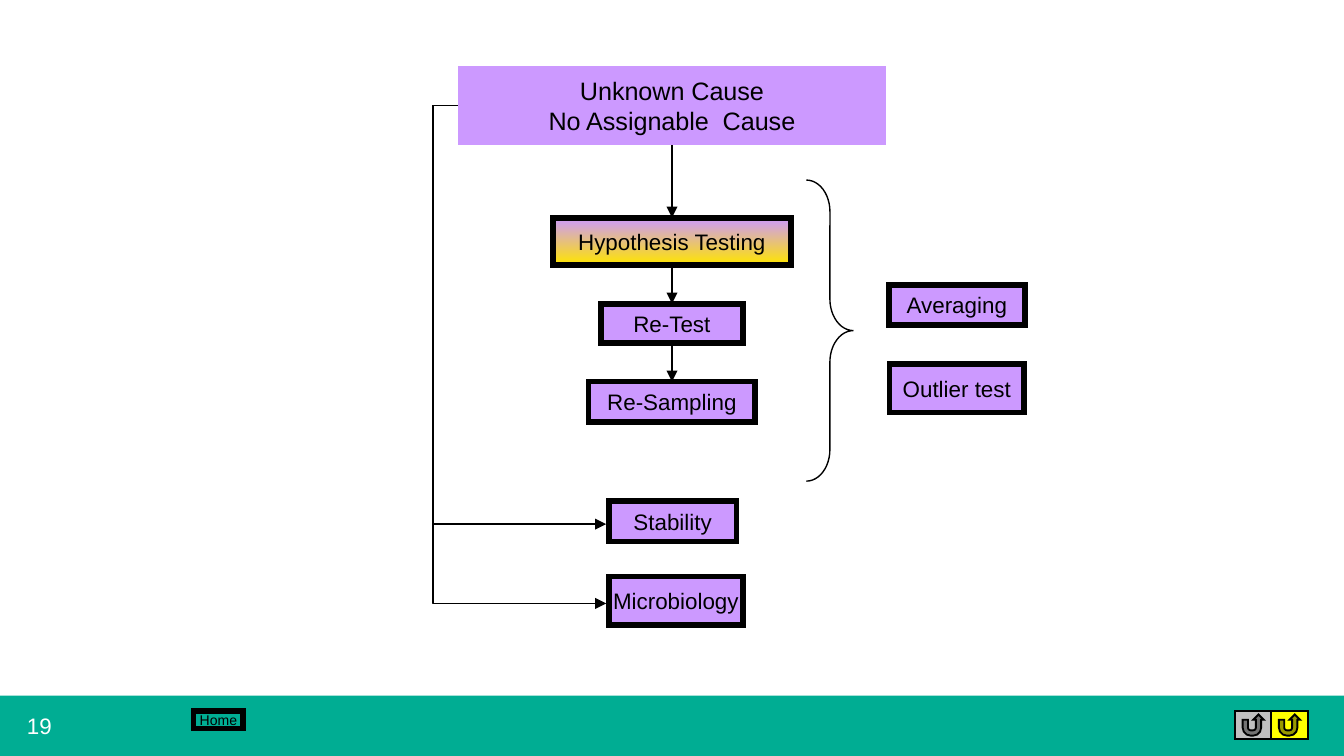
from dataclasses import dataclass
from lxml import etree
from pptx import Presentation
from pptx.dml.color import RGBColor
from pptx.enum.shapes import MSO_CONNECTOR, MSO_SHAPE
from pptx.enum.text import MSO_ANCHOR, PP_ALIGN
from pptx.oxml.ns import qn
from pptx.util import Inches, Pt

PROCESS = MSO_SHAPE.FLOWCHART_PROCESS
RECTANGLE = MSO_SHAPE.RECTANGLE
BRACE = MSO_SHAPE.RIGHT_BRACE
RETURN_BUTTON = MSO_SHAPE.ACTION_BUTTON_RETURN
STRAIGHT, ELBOW = MSO_CONNECTOR.STRAIGHT, MSO_CONNECTOR.ELBOW
LEFT, CENTER = PP_ALIGN.LEFT, PP_ALIGN.CENTER
MIDDLE = MSO_ANCHOR.MIDDLE
TOP_SIDE, BOTTOM_SIDE = 0, 2


@dataclass(frozen=True)
class Theme:
    font: str = "Arial"
    ink: str = "000000"
    paper: str = "FFFFFF"
    band: str = "00AD93"
    box: str = "CC99FF"
    glow: str = "FFE500"
    heading: float = 13.5
    body: float = 12
    small: float = 7.5
    thick: float = 3
    thin: float = 0.75


THEME = Theme()
WIDTH = 10
HEIGHT = WIDTH * 9 / 16
BAND_TOP = HEIGHT * 0.92
BAND_HEIGHT = HEIGHT - BAND_TOP
AXIS = WIDTH / 2
SIDE_AXIS = 7.12
TRUNK, BRANCH_LEFT = 3.22, 4.53

CAUSE = ("Unknown Cause\nNo Assignable  Cause", 0.49, 3.19, 0.59)
STEPS = [
    ("Hypothesis Testing", 1.62, 1.77, 0.35),
    ("Re-Test", 2.26, 1.06, 0.29),
    ("Re-Sampling", 2.84, 1.24, 0.3),
]
EVALUATIONS = [
    ("Averaging", 2.12, 1.01, 0.3),
    ("Outlier test", 2.71, 1, 0.36),
]
BRANCHES = [
    ("Stability", 3.73, 0.95, 0.3),
    ("Microbiology", 4.29, 1, 0.36),
]
BUTTON_FILLS = ["C0C0C0", "FFFF00"]
BUTTON_LEFT, BUTTON_WIDTH, BUTTON_HEIGHT = 9.19, 0.27, 0.21


def add_box(page, kind, left, top, width, height, fill=None, fade=None, line=None, weight=THEME.thick):
    box = page.shapes.add_shape(kind, *map(Inches, (left, top, width, height)))
    box.shadow.inherit = False
    if fade:
        box.fill.gradient()
        box.fill.gradient_angle = 270
        for stop, color in zip(box.fill.gradient_stops, (fill, fade)):
            stop.color.rgb = RGBColor.from_string(color)
    elif fill:
        box.fill.solid()
        box.fill.fore_color.rgb = RGBColor.from_string(fill)
    else:
        box.fill.background()
    if line:
        box.line.color.rgb = RGBColor.from_string(line)
        box.line.width = Pt(weight)
        etree.SubElement(box.element.spPr.find(qn("a:ln")), qn("a:miter"), lim="800000")
    else:
        box.line.fill.background()
    return box


def write(box, text, size=THEME.body, color=THEME.ink, align=CENTER, wrap=False, insets=None):
    frame = box.text_frame
    frame.text = text
    frame.word_wrap = wrap
    frame.vertical_anchor = MIDDLE
    if insets:
        frame.margin_left, frame.margin_top, frame.margin_right, frame.margin_bottom = map(Inches, insets)
    for para in frame.paragraphs:
        para.alignment = align
        for span in para.runs:
            span.font.name = THEME.font
            span.font.size = Pt(size)
            span.font.color.rgb = RGBColor.from_string(color)


def add_process(page, item, left=None, axis=AXIS, line=THEME.ink, size=THEME.body, fade=None):
    text, top, width, height = item
    if left is None:
        left = axis - width / 2
    box = add_box(page, PROCESS, left, top, width, height, fill=THEME.box, fade=fade, line=line)
    write(box, text, size=size)
    return box


def add_arrow(page, kind, start, end):
    arrow = page.shapes.add_connector(kind, *map(Inches, (*start, *end)))
    arrow.line.color.rgb = RGBColor.from_string(THEME.ink)
    arrow.line.width = Pt(THEME.thin)
    properties = arrow.element.spPr
    etree.SubElement(properties.find(qn("a:ln")), qn("a:tailEnd"), type="triangle")
    etree.SubElement(properties, qn("a:effectLst"))
    return arrow


def add_branch_arrow(page, start, end):
    arrow = add_arrow(page, ELBOW, start, end)
    bend = round((TRUNK - start[0]) / (end[0] - start[0]) * 100000)
    geometry = arrow.element.spPr.find(qn("a:prstGeom"))
    guides = geometry.find(qn("a:avLst"))
    if guides is None:
        guides = etree.SubElement(geometry, qn("a:avLst"))
    etree.SubElement(guides, qn("a:gd"), name="adj1", fmla=f"val {bend}")


def add_footer(page):
    add_box(page, RECTANGLE, 0, BAND_TOP, WIDTH, BAND_HEIGHT, fill=THEME.band)
    number = page.shapes.add_textbox(*map(Inches, (0, BAND_TOP, 0.59, BAND_HEIGHT)))
    write(number, "19", color=THEME.paper, align=LEFT, wrap=True, insets=(0.2, 0, 0, 0))
    home = add_box(page, RECTANGLE, 1.44, 5.29, 0.37, 0.13, line=THEME.ink)
    write(home, "Home", size=THEME.small, wrap=True, insets=(0, 0, 0, 0))
    for index, fill in enumerate(BUTTON_FILLS):
        add_box(page, RETURN_BUTTON, BUTTON_LEFT + index * BUTTON_WIDTH, 5.29,
                BUTTON_WIDTH, BUTTON_HEIGHT, fill=fill, line=THEME.ink, weight=1)


def add_flow(page):
    cause = add_process(page, CAUSE, line=None, size=THEME.heading)
    chain = [cause]
    for index, step in enumerate(STEPS):
        chain.append(add_process(page, step, fade=None if index else THEME.glow))
    for upper, lower in zip(chain, chain[1:]):
        arrow = add_arrow(page, STRAIGHT, (AXIS, 1), (AXIS, 2))
        arrow.begin_connect(upper, BOTTOM_SIDE)
        arrow.end_connect(lower, TOP_SIDE)

    brace = add_box(page, BRACE, 6, 1.34, 0.35, 2.24, line=THEME.ink, weight=THEME.thin)
    brace.adjustments[0] = 0.67
    for item in EVALUATIONS:
        add_process(page, item, axis=SIDE_AXIS)

    cause_top, cause_width, cause_height = CAUSE[1:]
    start = (AXIS - cause_width / 2, cause_top + cause_height / 2)
    for item in BRANCHES:
        add_process(page, item, left=BRANCH_LEFT)
        middle = item[1] + item[3] / 2
        add_branch_arrow(page, start, (BRANCH_LEFT - 0.02, middle + 0.02))


def main():
    deck = Presentation()
    deck.slide_width, deck.slide_height = Inches(WIDTH), Inches(HEIGHT)
    page = deck.slides.add_slide(deck.slide_layouts[6])
    add_footer(page)
    add_flow(page)
    deck.save("out.pptx")


if __name__ == "__main__":
    main()
